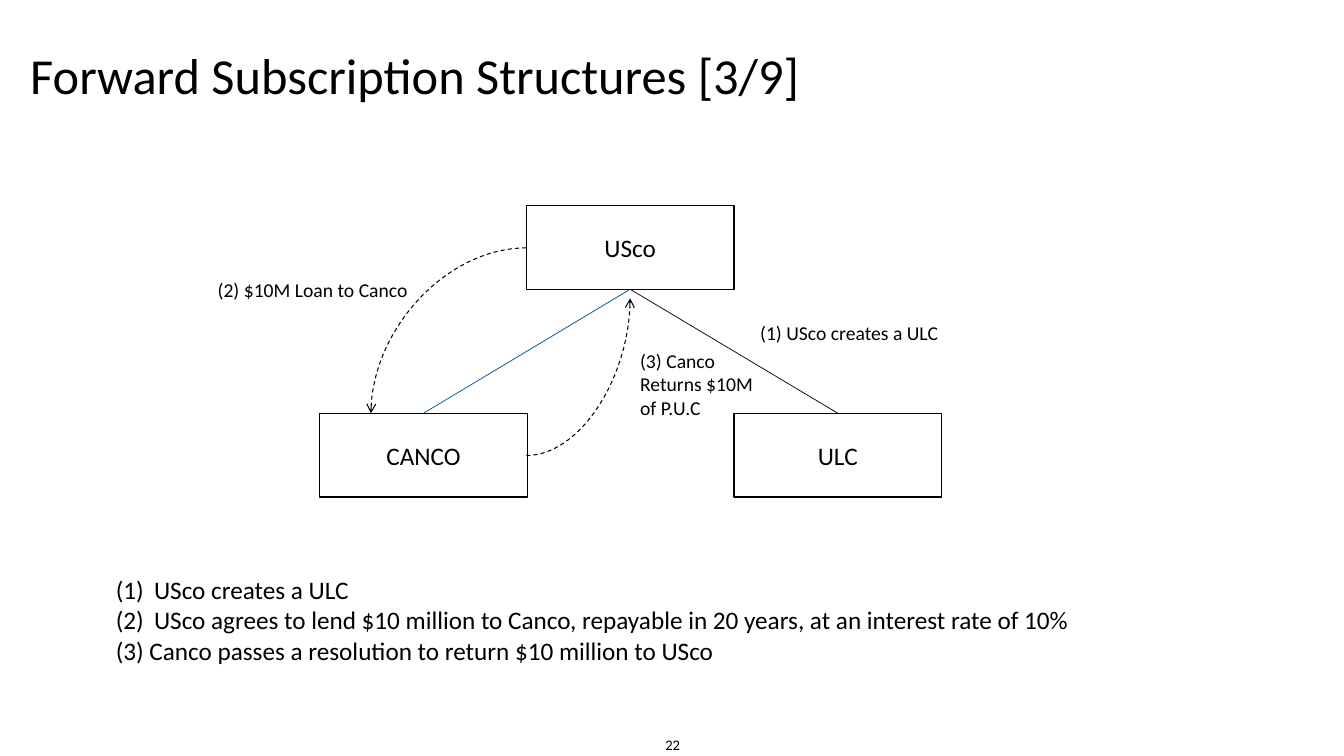
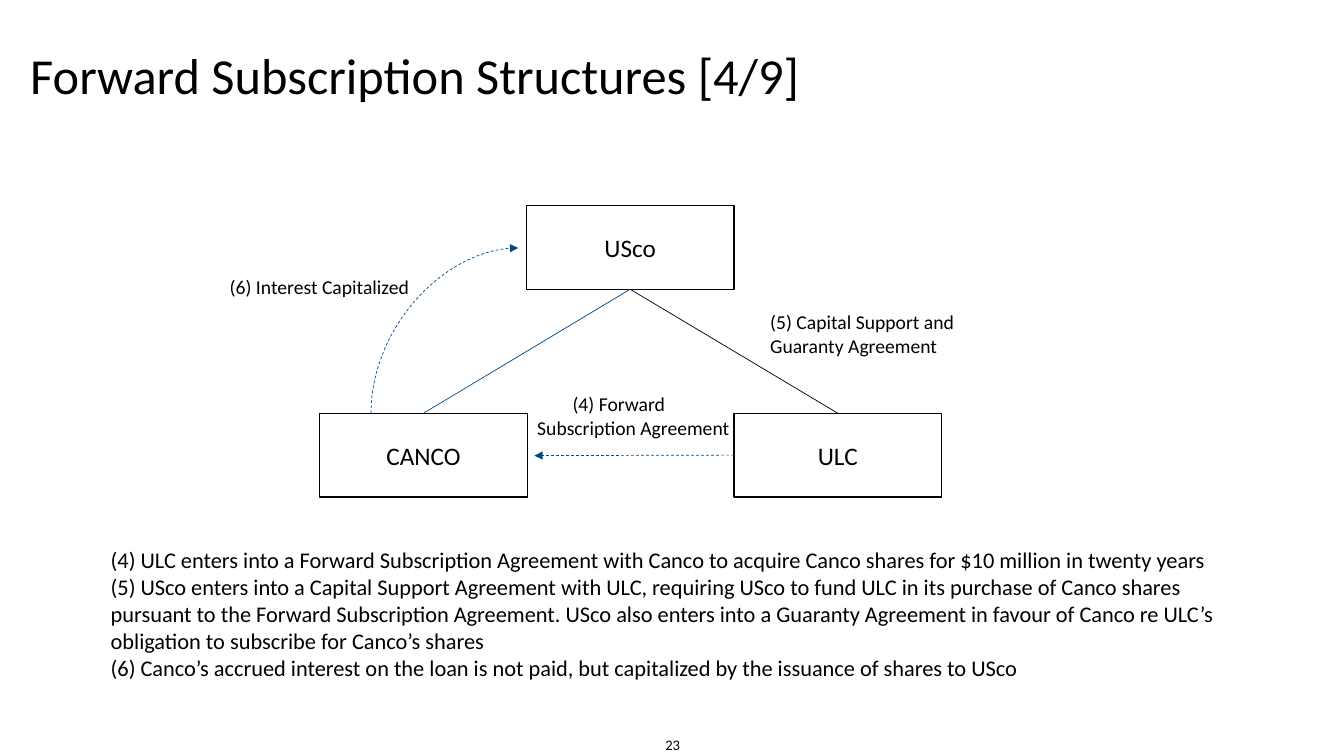
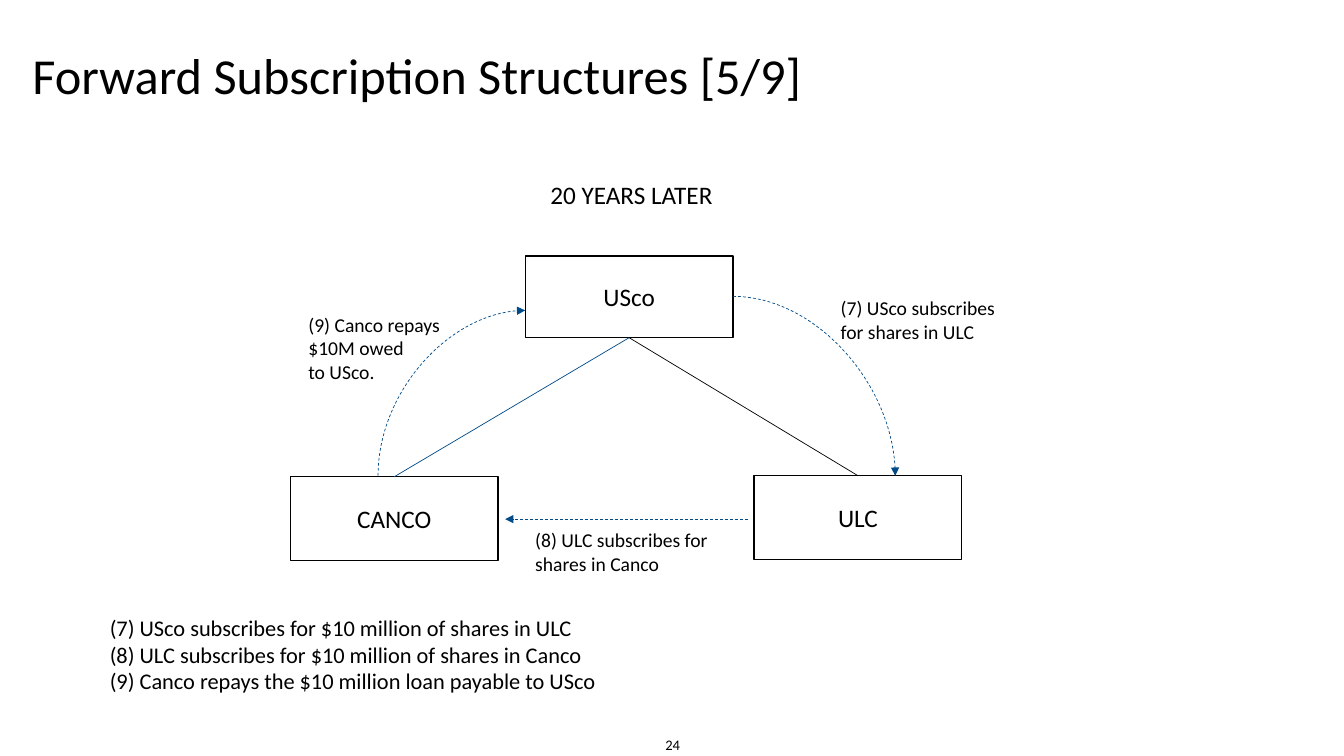
from lxml.etree import SubElement
from pptx import Presentation
from pptx.dml.color import RGBColor
from pptx.enum.dml import MSO_LINE
from pptx.enum.shapes import MSO_CONNECTOR, MSO_SHAPE
from pptx.enum.text import MSO_ANCHOR, PP_ALIGN
from pptx.oxml.ns import qn
from pptx.util import Inches, Pt

COLORS = {"ink": "000000", "paper": "FFFFFF", "blue": "004B87"}
FONT = "Calibri"
BOX_W, BOX_H = 2.06, 0.83


def rgb(name):
    return RGBColor.from_string(COLORS[name])


def set_format(target, values):
    for name, value in values.items():
        setattr(target, name, value)


class Deck:
    """Holds the shared style and the slide being drawn."""

    def __init__(self):
        self.prs = Presentation()
        set_format(self.prs, {"slide_width": Inches(13.33), "slide_height": Inches(7.5)})
        self.slide = None

    def start_slide(self, title, number, left=0.2):
        self.slide = self.prs.slides.add_slide(self.prs.slide_layouts[5])
        heading = self.slide.shapes.title
        set_format(heading, {"left": Inches(left), "top": Inches(0.4),
                             "width": Inches(11.73), "height": Inches(0.75)})
        self.set_lines(heading.text_frame, [title], 36, line_spacing=0.9)
        heading.text_frame.vertical_anchor = MSO_ANCHOR.MIDDLE
        page = self.text([str(number)], 6.5, 7.22, 0.4, 0.3, 18, wrap=False)
        page.paragraphs[0].runs[0].font._element.set("baseline", "30000")

    def set_lines(self, frame, lines, size, **paragraph_format):
        for i, line in enumerate(lines):
            paragraph = frame.paragraphs[0] if i == 0 else frame.add_paragraph()
            set_format(paragraph, {"alignment": PP_ALIGN.LEFT, **paragraph_format})
            run = paragraph.add_run()
            run.text = line
            set_format(run.font, {"name": FONT, "size": Pt(size)})
            run.font.color.rgb = rgb("ink")

    def text(self, lines, left, top, width, height, size=14, wrap=True):
        frame = self.slide.shapes.add_textbox(
            Inches(left), Inches(top), Inches(width), Inches(height)).text_frame
        frame.word_wrap = wrap
        self.set_lines(frame, lines, size)
        return frame

    def company(self, name, left, top, height=BOX_H):
        box = self.slide.shapes.add_shape(
            MSO_SHAPE.RECTANGLE, Inches(left), Inches(top), Inches(BOX_W), Inches(height))
        box.shadow.inherit = False
        box.fill.solid()
        box.fill.fore_color.rgb = rgb("paper")
        box.line.color.rgb = rgb("ink")
        box.line.width = Pt(1)
        box.text_frame.vertical_anchor = MSO_ANCHOR.MIDDLE
        self.set_lines(box.text_frame, [name], 18, alignment=PP_ALIGN.CENTER)
        return box

    def link(self, start, end, color="blue", width=0.5, head=None, kind=MSO_CONNECTOR.STRAIGHT):
        line = self.slide.shapes.add_connector(kind, *map(Inches, (*start, *end)))
        line.line.color.rgb = rgb(color)
        line.line.width = Pt(width)
        if head:
            line.line.dash_style = MSO_LINE.DASH
            SubElement(line._element.spPr.find(qn("a:ln")), qn("a:tailEnd"), type=head)
        SubElement(line._element.spPr, qn("a:effectLst"))
        return line

    def curve(self, start, end, upright=False, **style):
        """Quarter curve leaving sideways, or upwards and to the right if upright."""
        if upright:
            # Lay the box on its side about its middle, then turn it by 90 degrees
            mid_x, mid_y = (start[0] + end[0]) / 2, (start[1] + end[1]) / 2
            half_w, half_h = (start[1] - end[1]) / 2, (end[0] - start[0]) / 2
            start, end = (mid_x + half_w, mid_y + half_h), (mid_x - half_w, mid_y - half_h)
        line = self.link(start, end, kind=MSO_CONNECTOR.CURVE, **style)
        properties = line._element.spPr
        properties.find(qn("a:prstGeom")).set("prst", "curvedConnector2")
        if upright:
            properties.find(qn("a:xfrm")).set("rot", "5400000")

    def structure(self, usco_at=(5.22, 2.04), canco_at=(3.17, 4.1), ulc_at=(7.28, 4.1),
                  usco_height=BOX_H):
        """The parent with its two subsidiaries and the ownership lines."""
        usco = self.company("USco", *usco_at, usco_height)
        canco = self.company("CANCO", *canco_at)
        ulc = self.company("ULC", *ulc_at)
        for subsidiary, color in ((canco, "blue"), (ulc, "ink")):
            ownership = self.link(usco_at, canco_at, color)
            ownership.begin_connect(usco, 2)
            ownership.end_connect(subsidiary, 0)
        return ulc


def number_steps(paragraphs):
    for paragraph in paragraphs:
        properties = paragraph._p.get_or_add_pPr()
        for name, inches in (("marL", 0.38), ("indent", -0.38)):
            properties.set(name, str(Inches(inches)))
        SubElement(properties, qn("a:buFont"), typeface="+mj-lt")
        SubElement(properties, qn("a:buAutoNum"), type="arabicParenBoth")


def loan_slide(deck):
    deck.start_slide("Forward Subscription Structures [3/9]", 22)
    deck.structure()
    steps = deck.text([
        "USco creates a ULC",
        "USco agrees to lend $10 million to Canco, repayable in 20 years, at an interest rate of 10%",
        "(3) Canco passes a resolution to return $10 million to USco",
    ], 1.05, 5.65, 10.63, 1.01, 18)
    number_steps(steps.paragraphs[:2])
    # Flows
    flow = {"color": "ink", "width": 0.75, "head": "arrow"}
    deck.text(["(2) $10M Loan to Canco"], 2.06, 2.71, 2.67, 0.34)
    deck.curve((5.22, 2.46), (3.68, 4.1), **flow)
    deck.curve((5.22, 4.52), (6.25, 2.96), **flow)
    deck.text(["(3) Canco", "Returns $10M", "of P.U.C"], 6.25, 3.41, 1.57, 0.81)
    deck.text(["(1) USco creates a ULC"], 7.44, 3.13, 2.52, 0.34)


def agreement_slide(deck):
    deck.start_slide("Forward Subscription Structures [4/9]", 23)
    ulc = deck.structure()
    deck.text([
        "(4) ULC enters into a Forward Subscription Agreement with Canco to acquire Canco shares "
        "for $10 million in twenty years",
        "(5) USco enters into a Capital Support Agreement with ULC, requiring USco to fund ULC in "
        "its purchase of Canco shares pursuant to the Forward Subscription Agreement. USco also "
        "enters into a Guaranty Agreement in favour of Canco re ULC’s obligation to subscribe for "
        "Canco’s shares",
        "(6) Canco’s accrued interest on the loan is not paid, but capitalized by the issuance of "
        "shares to USco",
    ], 1, 5.37, 11.33, 1.45, 16)
    # Flows
    forward = deck.text(["(4) Forward Subscription Agreement"], 5.23, 3.84, 2.18, 0.57)
    forward.paragraphs[0]._p.get_or_add_pPr().set("indent", str(Inches(0.35)))
    deck.text(["(5) Capital Support and Guaranty Agreement"], 7.54, 3.03, 2.62, 0.57)
    deck.link((7.28, 4.52), (5.3, 4.52), head="triangle").begin_connect(ulc, 1)
    deck.curve((3.68, 4.1), (5.14, 2.46), upright=True, head="triangle")
    deck.text(["(6) Interest Capitalized"], 2.18, 2.68, 2.88, 0.34)


def repayment_slide(deck):
    deck.start_slide("Forward Subscription Structures [5/9]", 24, left=0.22)
    deck.structure((5.21, 2.54), (2.88, 4.73), (7.48, 4.72), usco_height=0.81)
    deck.text([
        "(7) USco subscribes for $10 million of shares in ULC",
        "(8) ULC subscribes for $10 million of shares in Canco",
        "(9) Canco repays the $10 million loan payable to USco",
    ], 0.99, 6.04, 5.25, 0.91, 16)
    # Flows
    deck.text(["(9) Canco repays", "$10M owed", "to USco."], 2.96, 3.05, 1.6, 0.81)
    deck.curve((3.75, 4.72), (5.21, 3.08), upright=True, head="triangle")
    deck.text(["20 YEARS LATER"], 5.36, 1.73, 2.62, 0.4, 18)
    deck.curve((7.27, 2.94), (8.88, 4.72), head="triangle")
    deck.text(["(7) USco subscribes for shares in ULC"], 8.24, 2.89, 1.8, 0.57)
    deck.link((7.42, 5.15), (5.01, 5.15), head="triangle")
    deck.text(["(8) ULC subscribes for shares in Canco"], 5.21, 5.19, 2.06, 0.57)


def main():
    deck = Deck()
    for build in (loan_slide, agreement_slide, repayment_slide):
        build(deck)
    deck.prs.save("out.pptx")


if __name__ == "__main__":
    main()
